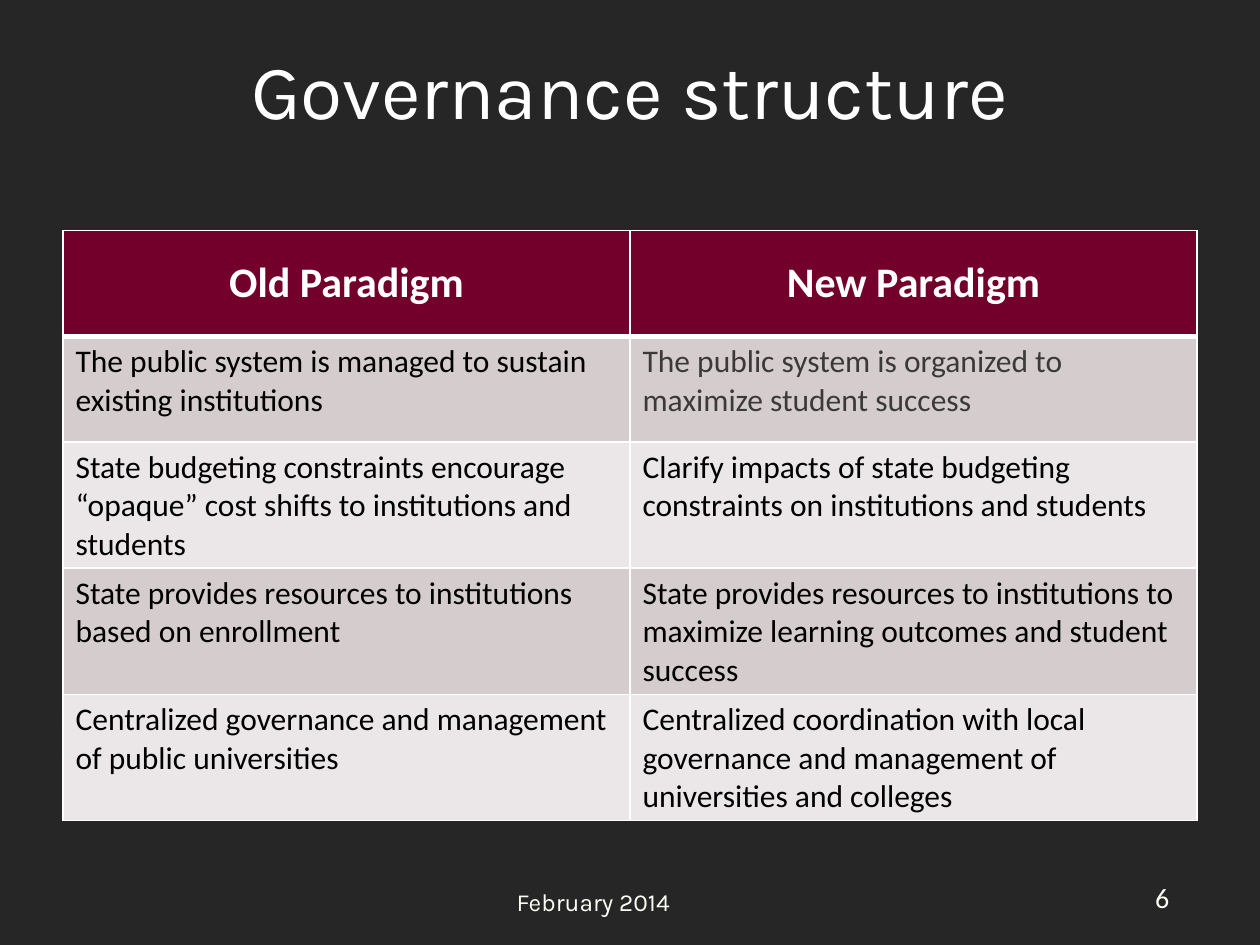
from lxml.etree import SubElement
from pptx import Presentation
from pptx.dml.color import RGBColor
from pptx.enum.text import MSO_ANCHOR, MSO_AUTO_SIZE, PP_ALIGN
from pptx.oxml.ns import qn
from pptx.util import Inches, Pt

BACKGROUND = RGBColor(0x26, 0x26, 0x26)
WHITE = RGBColor(0xFF, 0xFF, 0xFF)
IVORY = RGBColor(0xFF, 0xFF, 0xF5)
BLACK = RGBColor(0x00, 0x00, 0x00)
GREY = RGBColor(0x3A, 0x3A, 0x3A)
MAROON = RGBColor(0x72, 0x00, 0x2A)
DARK_BAND = RGBColor(0xD5, 0xCC, 0xCD)
LIGHT_BAND = RGBColor(0xEB, 0xE7, 0xE8)

ROWS = [
    ("Old Paradigm", "New Paradigm"),
    ("The public system is managed to sustain existing institutions",
     "The public system is organized to maximize student success"),
    ("State budgeting constraints encourage “opaque” cost shifts to institutions and students",
     "Clarify impacts of state budgeting constraints on institutions and students"),
    ("State provides resources to institutions based on enrollment",
     "State provides resources to institutions to maximize learning outcomes and student success"),
    ("Centralized governance and management of public universities",
     "Centralized coordination with local governance and management of universities and colleges"),
]


def add_run(text_frame, text, size, font, color, bold=False):
    run = text_frame.paragraphs[0].add_run()
    run.text = text
    run.font.size = Pt(size)
    run.font.name = font
    run.font.bold = bold
    run.font.color.rgb = color


def add_border(cell, side, width):
    line = SubElement(cell._tc.get_or_add_tcPr(), qn(f"a:{side}"), w=str(Pt(width)))
    fill = SubElement(line, qn("a:solidFill"))
    SubElement(fill, qn("a:srgbClr"), val=str(WHITE))


presentation = Presentation()
presentation.slide_width = Inches(10)
presentation.slide_height = Inches(7.5)
slide = presentation.slides.add_slide(presentation.slide_layouts[6])
slide.background.fill.solid()
slide.background.fill.fore_color.rgb = BACKGROUND

page_number = slide.shapes.add_textbox(Inches(9.07), Inches(6.94), Inches(0.7), Inches(0.37))
add_run(page_number.text_frame, "6", 16, "Calibri", IVORY)

footer = slide.shapes.add_textbox(Inches(0.5), Inches(6.99), Inches(8.57), Inches(0.34))
footer.text_frame.margin_left = Inches(3.6)
add_run(footer.text_frame, "February 2014", 14, "Karla", IVORY)

for shape in (page_number, footer):
    shape.text_frame.word_wrap = True
    shape.text_frame.auto_size = MSO_AUTO_SIZE.SHAPE_TO_FIT_TEXT

title = slide.shapes.add_textbox(Inches(0.5), Inches(0.21), Inches(9), Inches(0.99))
title.text_frame.word_wrap = True
title.text_frame.vertical_anchor = MSO_ANCHOR.MIDDLE
title.text_frame.paragraphs[0].alignment = PP_ALIGN.CENTER
add_run(title.text_frame, "Governance structure", 44, "Karla", WHITE)

table = slide.shapes.add_table(
    len(ROWS), 2, Inches(0.5), Inches(1.83), Inches(9), Inches(4.2)).table

for row_index, texts in enumerate(ROWS):
    table.rows[row_index].height = Inches(0.84)
    for column_index, text in enumerate(texts):
        cell = table.cell(row_index, column_index)
        add_border(cell, "lnL", 1)
        add_border(cell, "lnR", 1)
        add_border(cell, "lnT", 3 if row_index == 1 else 1)
        add_border(cell, "lnB", 3 if row_index == 0 else 1)
        cell.fill.solid()
        if row_index == 0:
            cell.fill.fore_color.rgb = MAROON
            cell.vertical_anchor = MSO_ANCHOR.MIDDLE
            cell.text_frame.paragraphs[0].alignment = PP_ALIGN.CENTER
            add_run(cell.text_frame, text, 24, "Calibri", WHITE, True)
        else:
            cell.fill.fore_color.rgb = DARK_BAND if row_index % 2 else LIGHT_BAND
            color = GREY if (row_index, column_index) == (1, 1) else BLACK
            add_run(cell.text_frame, text, 18, "Calibri", color)

presentation.save("out.pptx")
